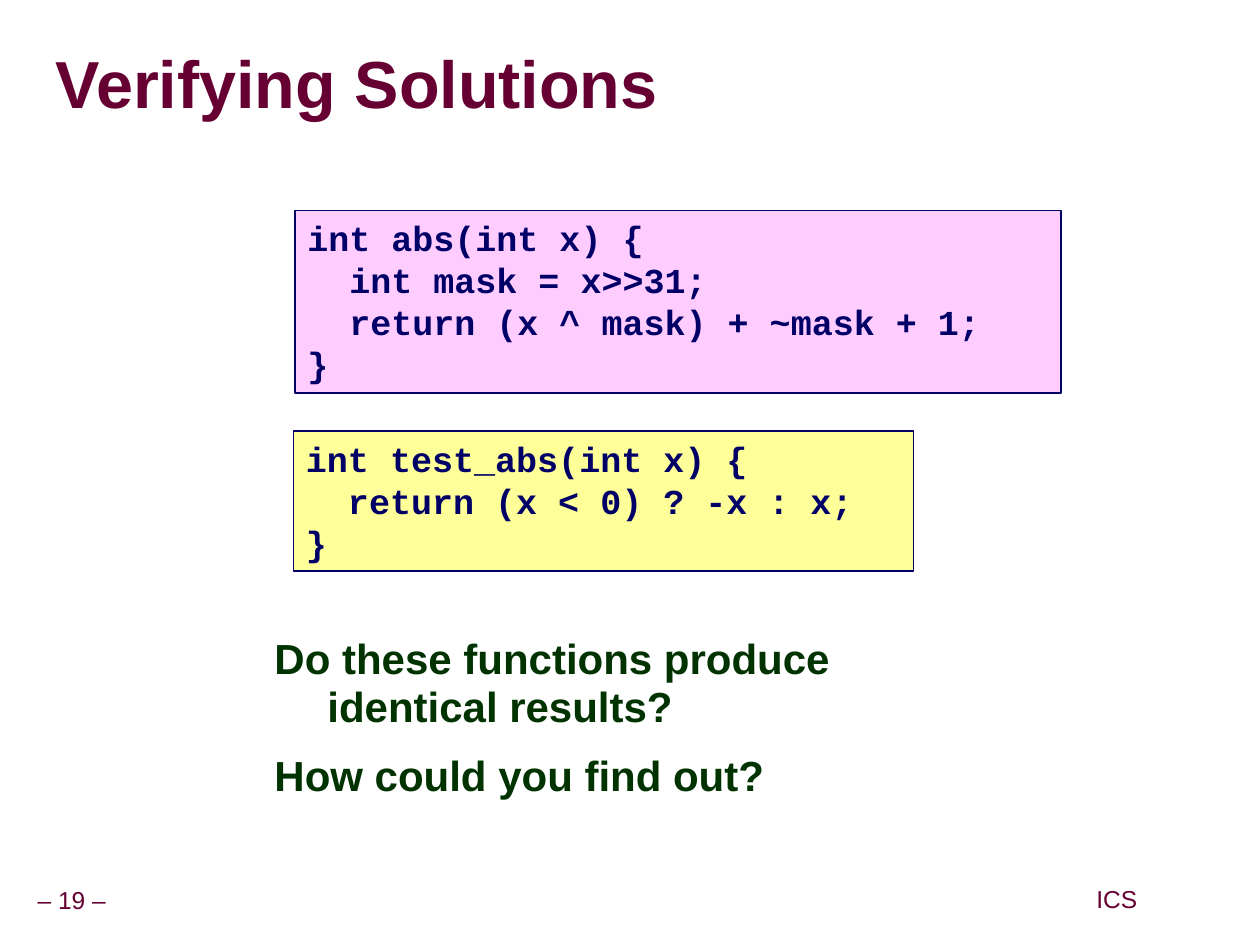
from dataclasses import dataclass

from lxml import etree
from pptx import Presentation
from pptx.dml.color import RGBColor
from pptx.enum.shapes import MSO_SHAPE
from pptx.enum.text import MSO_ANCHOR, PP_ALIGN
from pptx.oxml.ns import qn
from pptx.util import Inches, Pt

RECT = MSO_SHAPE.RECTANGLE
TOP, MIDDLE = MSO_ANCHOR.TOP, MSO_ANCHOR.MIDDLE
LEFT, CENTER = PP_ALIGN.LEFT, PP_ALIGN.CENTER
WINE, GREEN, NAVY = "660033", "003300", "000066"
SANS, MONO = "Arial", "Courier New"


@dataclass
class Box:
    """Place and size in inches."""
    left: float
    top: float
    width: float
    height: float

    def spans(self) -> list:
        """Return the four values as lengths."""
        return [Inches(v) for v in (self.left, self.top, self.width, self.height)]


@dataclass
class Code:
    """A filled panel of source code."""
    box: Box
    fill: str
    lines: list[str]


@dataclass
class Note:
    """A small label at the foot of the slide."""
    box: Box
    text: str


NOTES = [
    Note(Box(0.24, 7, 0.66, 0.31), "– 19 –"),
    Note(Box(8.65, 6.99, 0.43, 0.31), "ICS"),
]
CODES = [
    Code(Box(2.34, 1.67, 6.08, 1.45), "FFCCFF", [
        "int abs(int x) {",
        "  int mask = x>>31;",
        "  return (x ^ mask) + ~mask + 1;",
        "}",
    ]),
    Code(Box(2.33, 3.42, 4.92, 1.11), "FFFF99", [
        "int test_abs(int x) {",
        "  return (x < 0) ? -x : x;",
        "}",
    ]),
]
ASKS = ["Do these functions produce identical results?", "How could you find out?"]


def tint(code: str) -> RGBColor:
    """Turn a hex string into a colour."""
    return RGBColor.from_string(code)


def shade(run) -> None:
    """Give a run a grey drop shadow."""
    glow = etree.Element(qn("a:effectLst"))
    drop = etree.SubElement(glow, qn("a:outerShdw"), dist="53882", dir="2700000")
    etree.SubElement(drop, qn("a:srgbClr"), val="969696")
    run.font.fill._xPr.find(qn("a:solidFill")).addnext(glow)


def write(shape, lines: list[str], *, size: float, color: str, font: str = SANS,
          bold: bool = False, align=LEFT, anchor=TOP, pads: tuple = (0.1, 0.05),
          wrap: bool = True, pitch: float = 1.0, before: float = 0,
          hang: float = 0, shadow: bool = False) -> None:
    """Fill a shape with formatted paragraphs."""
    frame = shape.text_frame
    frame.word_wrap, frame.vertical_anchor = wrap, anchor
    frame.margin_left = frame.margin_right = Inches(pads[0])
    frame.margin_top = frame.margin_bottom = Inches(pads[1])
    for i, line in enumerate(lines):
        para = frame.add_paragraph() if i else frame.paragraphs[0]
        para.alignment, para.line_spacing = align, pitch
        para.space_before = Pt(before)
        if hang:
            props = para._p.get_or_add_pPr()
            props.set("marL", str(Inches(hang)))
            props.set("indent", str(-Inches(hang)))
        run = para.add_run()
        run.text = line
        run.font.size, run.font.name, run.font.bold = Pt(size), font, bold
        run.font.color.rgb = tint(color)
        if shadow:
            shade(run)


def label(slide, box: Box, lines: list[str], **form) -> None:
    """Add a plain text box."""
    write(slide.shapes.add_textbox(*box.spans()), lines, **form)


def panel(slide, code: Code) -> None:
    """Add a code panel."""
    shape = slide.shapes.add_shape(RECT, *code.box.spans())
    shape.shadow.inherit = False
    shape.fill.solid()
    shape.fill.fore_color.rgb = tint(code.fill)
    shape.line.color.rgb = tint(NAVY)
    shape.line.width = Pt(1)
    write(shape, code.lines, size=20, color=NAVY, font=MONO, bold=True, anchor=TOP)


def main() -> None:
    """Build and save the slide."""
    deck = Presentation()
    deck.slide_width, deck.slide_height = Inches(10), Inches(7.5)
    slide = deck.slides.add_slide(deck.slide_layouts[6])
    for note in NOTES:
        label(slide, note.box, [note.text], size=14, color=WINE, align=CENTER,
              anchor=MIDDLE, pads=(0.05, 0.05), wrap=False, pitch=0.9)
    label(slide, Box(0.44, 0.27, 9.53, 0.85), ["Verifying Solutions"], size=38,
          color=WINE, bold=True, anchor=MIDDLE, pads=(0, 0), pitch=0.87, shadow=True)
    label(slide, Box(2.08, 5, 5.81, 2.09), ASKS, size=24, color=GREEN, bold=True,
          pitch=0.95, before=12, hang=0.42)
    for code in CODES:
        panel(slide, code)
    deck.save("out.pptx")


if __name__ == "__main__":
    main()
